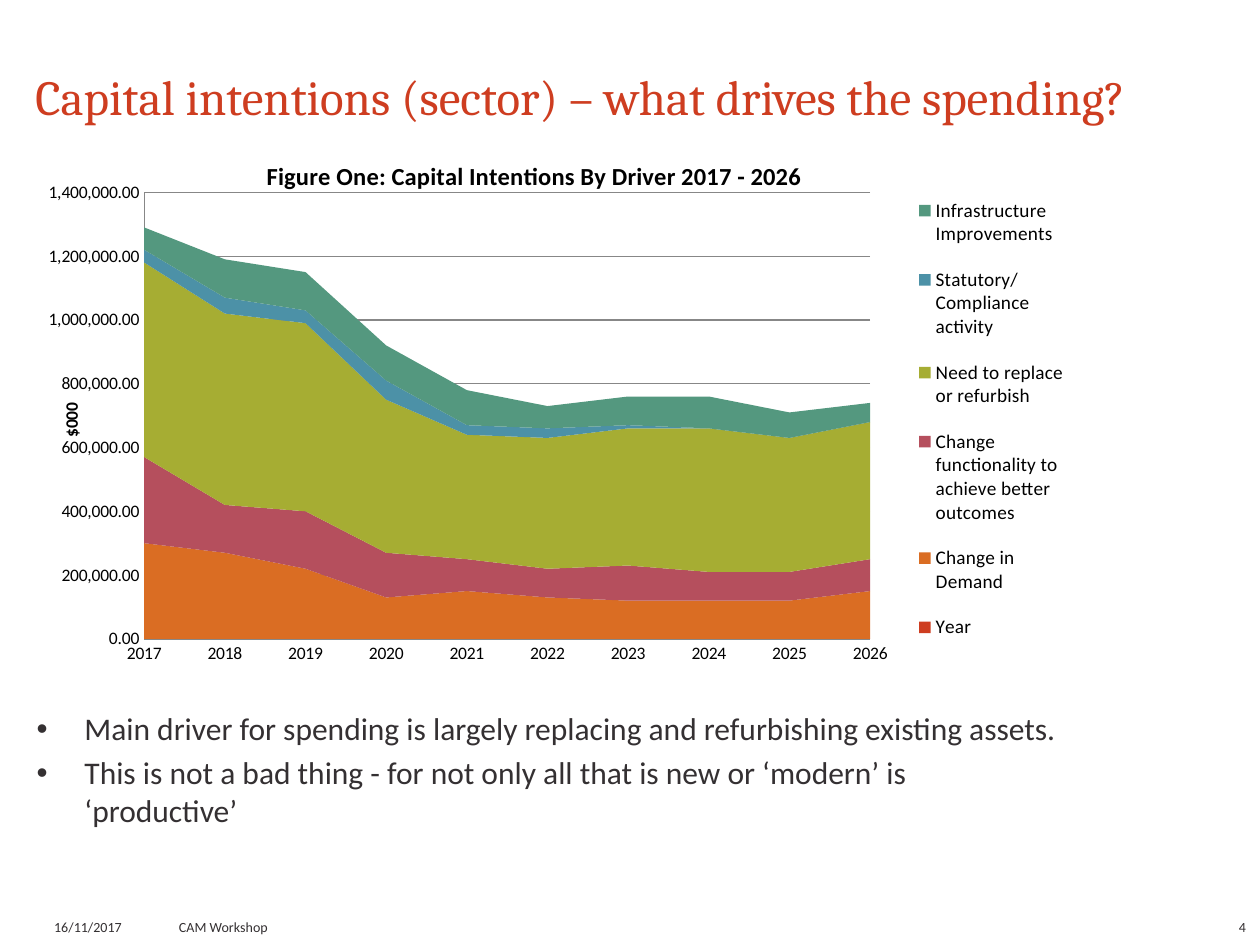
from lxml.etree import SubElement
from pptx import Presentation
from pptx.chart.data import CategoryChartData
from pptx.dml.color import RGBColor
from pptx.enum.chart import XL_CHART_TYPE as ChartType, XL_LEGEND_POSITION as LegendPosition
from pptx.enum.chart import XL_TICK_MARK as TickMark
from pptx.enum.text import MSO_ANCHOR as Anchor, MSO_AUTO_SIZE as AutoSize, PP_ALIGN as Align
from pptx.oxml.ns import qn
from pptx.util import Inches, Pt

COLORS = {
    "title": "CE3D20", "text": "343032", "chart": "000000", "grid": "878787",
    "year": "CE3D20", "demand": "DA6D23", "function": "B54F5D",
    "replace": "A6AD33", "statutory": "4C91A7", "improve": "54987F",
}
# Name, colour and yearly values in $ millions
DRIVERS = [
    ("Year", "year", [0] * 10),
    ("Change in Demand", "demand",
     [300, 270, 220, 130, 150, 130, 120, 120, 120, 150]),
    ("Change functionality to achieve better outcomes", "function",
     [270, 150, 180, 140, 100, 90, 110, 90, 90, 100]),
    ("Need to replace or refurbish", "replace",
     [610, 600, 590, 480, 390, 410, 430, 450, 420, 430]),
    ("Statutory/Compliance activity", "statutory",
     [40, 50, 40, 60, 30, 30, 10, 0, 0, 0]),
    ("Infrastructure Improvements", "improve",
     [70, 120, 120, 110, 110, 70, 90, 100, 80, 60]),
]


def color(name):
    return RGBColor.from_string(COLORS[name])


def format_font(font, size, shade="text", name="Calibri", bold=False):
    font.size, font.name, font.bold = Pt(size), name, bold
    font.color.rgb = color(shade)


def write(para, text, align=Align.LEFT, **style):
    """Put formatted text in a paragraph."""
    para.alignment = align
    span = para.add_run()
    span.text = text
    format_font(span.font, **style)


def set_layout(element, x, y, width=None, height=None, inner=False):
    """Place a chart part by fractions of the chart's size."""
    for old in element.findall(qn("c:layout")):
        element.remove(old)
    layout = element.makeelement(qn("c:layout"))
    manual = SubElement(layout, qn("c:manualLayout"))
    values = [("layoutTarget", "inner" if inner else None),
              ("xMode", "edge"), ("yMode", "edge"),
              ("x", x), ("y", y), ("w", width), ("h", height)]
    for tag, value in values:
        if value is not None:
            SubElement(manual, qn(f"c:{tag}")).set("val", str(value))
    before = element.find(qn("c:tx"))
    if before is None:
        before = element.find(qn("c:legendPos"))
    if before is None:
        element.insert(0, layout)
    else:
        before.addnext(layout)


class SlideBuilder:
    def __init__(self, deck):
        self.page = deck.slides.add_slide(deck.slide_layouts[1])

    def place(self, shape, left, top, width, height):
        shape.left, shape.top = Inches(left), Inches(top)
        shape.width, shape.height = Inches(width), Inches(height)
        frame = shape.text_frame
        frame.word_wrap, frame.auto_size = True, AutoSize.NONE
        return frame

    def clear_margins(self, frame):
        frame.margin_left = frame.margin_right = 0
        frame.margin_top = frame.margin_bottom = 0

    def title(self, text, *bounds):
        frame = self.place(self.page.shapes.title, *bounds)
        self.clear_margins(frame)
        frame.vertical_anchor = Anchor.MIDDLE
        para = frame.paragraphs[0]
        para.line_spacing = Pt(35)
        write(para, text, size=28, shade="title", name="Cambria")

    def bullets(self, lines, *bounds):
        frame = self.place(self.page.placeholders[1], *bounds)
        for index, line in enumerate(lines):
            para = frame.add_paragraph() if index else frame.paragraphs[0]
            para.space_before = Pt(3.6 if index else 0)
            props = para._p.get_or_add_pPr()
            props.set("marL", str(Inches(0.38)))
            props.set("indent", str(Inches(-0.38)))
            SubElement(props, qn("a:buFont")).set("typeface", "Arial")
            SubElement(props, qn("a:buChar")).set("char", "•")
            write(para, line, size=18)

    def footer(self, text, *bounds, align=Align.LEFT):
        box = self.page.shapes.add_textbox(0, 0, 0, 0)
        frame = self.place(box, *bounds)
        self.clear_margins(frame)
        frame.vertical_anchor = Anchor.BOTTOM
        write(frame.paragraphs[0], text, align=align, size=8)

    def area_chart(self, heading, unit, years, drivers, *bounds):
        data = CategoryChartData(number_format="#,##0.00")
        data.categories = years
        for name, _, millions in drivers:
            data.add_series(name, [value * 1000 for value in millions])
        chart = self.page.shapes.add_chart(
            ChartType.AREA_STACKED, *map(Inches, bounds), data).chart
        format_font(chart.font, 10, "chart")
        plot = chart.plots[0]
        plot.vary_by_categories = False
        for series, (_, shade, _) in zip(plot.series, drivers):
            series.format.fill.solid()
            series.format.fill.fore_color.rgb = color(shade)
        set_layout(chart._chartSpace.chart.plotArea,
                   0.095, 0.108, 0.707, 0.802, inner=True)

        # Headings
        chart.has_title = True
        write(chart.chart_title.text_frame.paragraphs[0], heading,
              align=Align.CENTER, size=14, shade="chart", bold=True)
        set_layout(chart.chart_title._element, 0.21, 0.04)
        chart.chart_title.include_in_layout = False

        # Axes
        for axis in (chart.category_axis, chart.value_axis):
            axis.major_tick_mark = axis.minor_tick_mark = TickMark.NONE
            format_font(axis.tick_labels.font, 10, "chart")
            axis.format.line.color.rgb = color("grid")
            axis.format.line.width = Pt(0.75)
        chart.category_axis.has_major_gridlines = False
        values = chart.value_axis
        values.minimum_scale, values.maximum_scale = 0, 1400000
        values.major_unit = 200000
        values.tick_labels.number_format = "#,##0.00"
        values.tick_labels.number_format_is_linked = False
        values.has_major_gridlines = True
        values.major_gridlines.format.line.color.rgb = color("grid")
        values.major_gridlines.format.line.width = Pt(0.75)
        values._element.find(qn("c:crossBetween")).set("val", "midCat")
        values.has_title = True
        title_frame = values.axis_title.text_frame
        write(title_frame.paragraphs[0], unit, align=Align.CENTER,
              size=10, shade="chart", bold=True)
        title_frame._txBody.bodyPr.set("rot", "-5400000")
        title_frame._txBody.bodyPr.set("vert", "horz")
        set_layout(values.axis_title._element, 0.01, 0.48)

        # Legend
        chart.has_legend = True
        legend = chart.legend
        legend.position = LegendPosition.RIGHT
        legend.include_in_layout = False
        format_font(legend.font, 11, "chart")
        set_layout(legend._element, 0.84, 0.08, 0.16, 0.87)


def main():
    deck = Presentation()
    deck.slide_width, deck.slide_height = Inches(10), Inches(7.5)
    slide = SlideBuilder(deck)
    slide.title("Capital intentions (sector) – what drives the spending?",
                0.28, 0.46, 9.48, 0.59)
    slide.bullets([
        "Main driver for spending is largely replacing and refurbishing existing assets.",
        "This is not a bad thing - for not only all that is new or ‘modern’ is ‘productive’",
    ], 0.19, 5.58, 8.33, 1.7)
    slide.area_chart("Figure One: Capital Intentions By Driver 2017 - 2026", "$000",
                     [str(year) for year in range(2017, 2027)], DRIVERS,
                     0.37, 1.05, 8.15, 4.42)
    slide.footer("16/11/2017", 0.43, 7.28, 0.93, 0.14)
    slide.footer("CAM Workshop", 1.42, 7.28, 6.02, 0.14)
    slide.footer("4", 7.56, 7.28, 2.33, 0.14, align=Align.RIGHT)
    deck.save("out.pptx")


if __name__ == "__main__":
    main()
